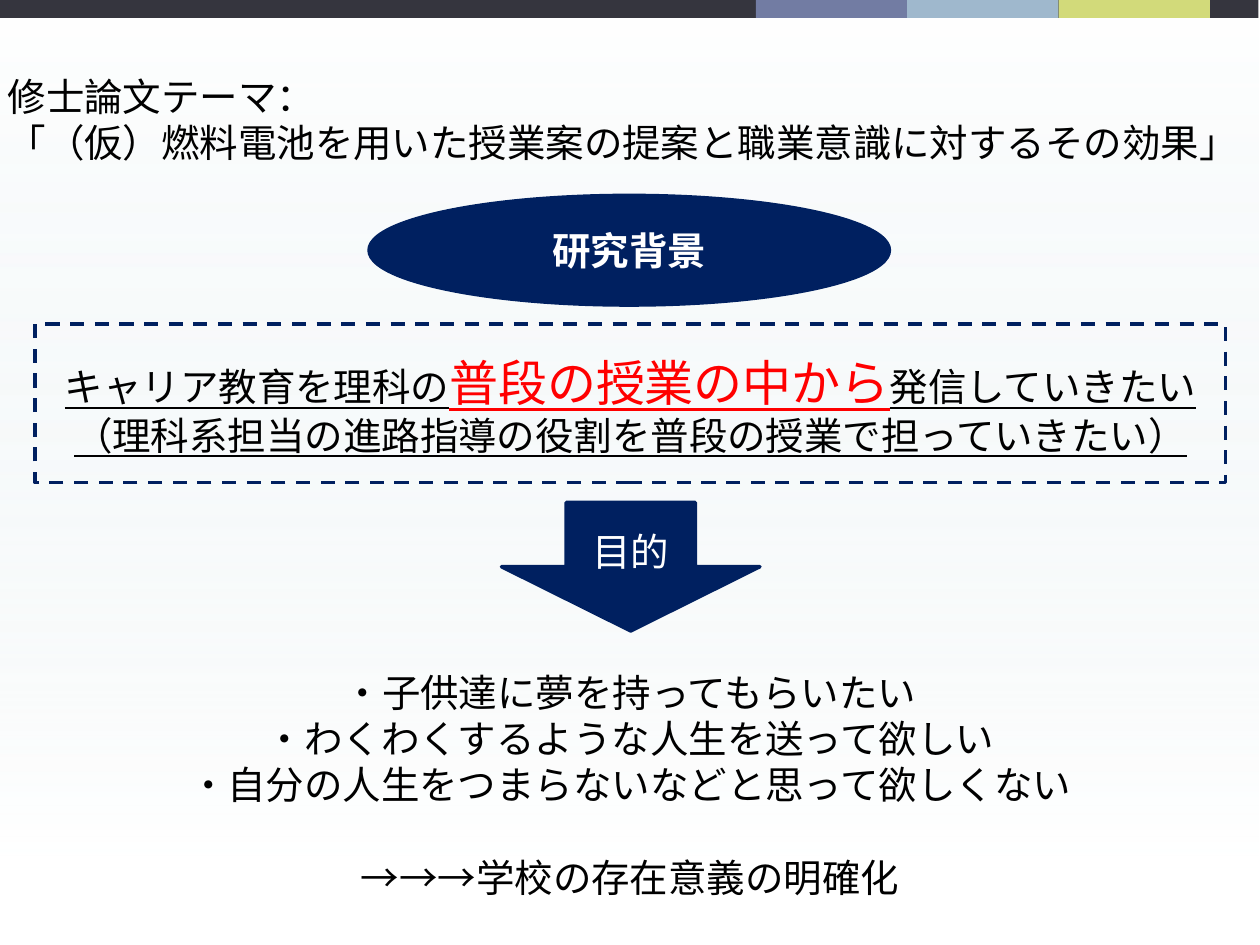
"""Build a slide on the background and aims of a master's thesis."""
from dataclasses import dataclass

from lxml import etree
from pptx import Presentation
from pptx import util as u
from pptx.dml.color import RGBColor
from pptx.enum import dml, shapes, text
from pptx.oxml.ns import qn

COLORS = {
    "navy": "002060", "black": "000000", "white": "FFFFFF", "red": "FF0000",
    "mist": "DDE9EC", "charcoal": "35353E", "violet": "727CA3",
    "sky": "9FB8CD", "lime": "D2DA7A",
}
FONT = "Calibri"
BODY_SIZE = 22
LINE_PITCH = 26.5
BAR_WIDTH = 3.05


@dataclass(frozen=True)
class Box:
    left: float
    top: float
    width: float
    height: float

    def lengths(self) -> list:
        return [u.Cm(value) for value in (self.left, self.top, self.width, self.height)]


@dataclass(frozen=True)
class Span:
    words: str
    color: str = "black"
    size: int = BODY_SIZE
    bold: bool = False
    underline: bool = False


def rgb(name: str) -> RGBColor:
    return RGBColor.from_string(COLORS[name])


def add_panel(slide, kind, box: Box, fill: str = "", line: str = ""):
    shape = slide.shapes.add_shape(kind, *box.lengths())
    shape.shadow.inherit = False
    if fill:
        shape.fill.solid()
        shape.fill.fore_color.rgb = rgb(fill)
    else:
        shape.fill.background()
    if line:
        shape.line.color.rgb = rgb(line)
        shape.line.width = u.Pt(2)
    else:
        shape.line.fill.background()
    return shape


def write(shape, lines: list[list[Span]], align) -> None:
    frame = shape.text_frame
    for index, spans in enumerate(lines):
        paragraph = frame.add_paragraph() if index else frame.paragraphs[0]
        paragraph.alignment = align
        for span in spans:
            run = paragraph.add_run()
            run.text = span.words
            run.font.name = FONT
            run.font.size = u.Pt(span.size)
            run.font.bold = span.bold
            run.font.underline = span.underline
            run.font.color.rgb = rgb(span.color)


def fit_to_text(shape) -> None:
    frame = shape.text_frame
    frame.word_wrap = False
    frame.auto_size = text.MSO_AUTO_SIZE.SHAPE_TO_FIT_TEXT
    frame.vertical_anchor = text.MSO_ANCHOR.TOP


def add_text(slide, box: Box, lines: list[list[Span]]):
    shape = slide.shapes.add_textbox(*box.lengths())
    fit_to_text(shape)
    write(shape, lines, text.PP_ALIGN.CENTER)
    return shape


def add_label(slide, kind, box: Box, span: Span) -> None:
    shape = add_panel(slide, kind, box, "navy", "navy")
    shape.text_frame.vertical_anchor = text.MSO_ANCHOR.MIDDLE
    write(shape, [[span]], text.PP_ALIGN.CENTER)


def add_backdrop(slide) -> None:
    shape = add_panel(slide, shapes.MSO_SHAPE.RECTANGLE, Box(-0.03, 0, 25.4, 17.48))
    shape.fill.gradient()
    shape.fill.gradient_angle = 90
    settings = (("mist", 0.01, 0), ("white", 1, 92))
    for stop, (color, position, _) in zip(shape.fill.gradient_stops, settings):
        stop.color.rgb = rgb(color)
        stop.position = position
    for element, (_, _, opacity) in zip(shape.element.iter(qn("a:srgbClr")), settings):
        etree.SubElement(element, qn("a:alpha"), val=str(opacity * 1000))


def add_header(slide) -> None:
    rectangle = shapes.MSO_SHAPE.RECTANGLE
    add_panel(slide, rectangle, Box(-0.03, -0.05, 25.4, 0.41), "charcoal")
    for index, color in enumerate(("violet", "sky", "lime")):
        left = 15.24 + index * BAR_WIDTH
        add_panel(slide, rectangle, Box(left, -0.05, BAR_WIDTH, 0.41), color)


def add_theme(slide) -> None:
    title = slide.shapes.title
    title.element.getparent().append(title.element)
    title.left, title.top, title.width, title.height = Box(-0.1, 1.35, 25.6, 2.13).lengths()
    fit_to_text(title)
    write(title, [
        [Span("修士論文テーマ：")],
        [Span("「（仮）燃料電池を用いた授業案の提案と職業意識に対するその効果」")],
    ], text.PP_ALIGN.LEFT)


def add_message(slide) -> None:
    add_text(slide, Box(0.91, 6.99, 23.6, 2.39), [
        [
            Span("キャリア教育を理科の", underline=True),
            Span("普段の授業の中から", "red", 28, underline=True),
            Span("発信していきたい", underline=True),
        ],
        [Span("（理科系担当の進路指導の役割を普段の授業で担っていきたい）", underline=True)],
    ])


def add_aims(slide) -> None:
    aims = add_text(slide, Box(3.43, 13.36, 18.54, 4.95), [
        [Span("・子供達に夢を持ってもらいたい")],
        [Span("・わくわくするような人生を送って欲しい")],
        [Span("・自分の人生をつまらないなどと思って欲しくない")],
        [Span("→→→学校の存在意義の明確化")],
    ])
    aims.text_frame.paragraphs[-1].space_before = u.Pt(LINE_PITCH)


def main() -> None:
    presentation = Presentation()
    presentation.slide_width = u.Cm(25.4)
    presentation.slide_height = u.Cm(19.05)
    slide = presentation.slides.add_slide(presentation.slide_layouts.get_by_name("Title Only"))
    add_backdrop(slide)
    add_header(slide)
    add_theme(slide)
    add_label(slide, shapes.MSO_SHAPE.OVAL, Box(7.44, 3.94, 10.49, 2.21),
              Span("研究背景", "white", bold=True))
    add_message(slide)
    add_label(slide, shapes.MSO_SHAPE.DOWN_ARROW, Box(10.11, 10.13, 5.21, 2.59),
              Span("目的", "white"))
    add_aims(slide)
    frame = add_panel(slide, shapes.MSO_SHAPE.RECTANGLE, Box(0.71, 6.53, 24, 3.2), line="navy")
    frame.line.dash_style = dml.MSO_LINE.DASH
    presentation.save("out.pptx")


if __name__ == "__main__":
    main()
